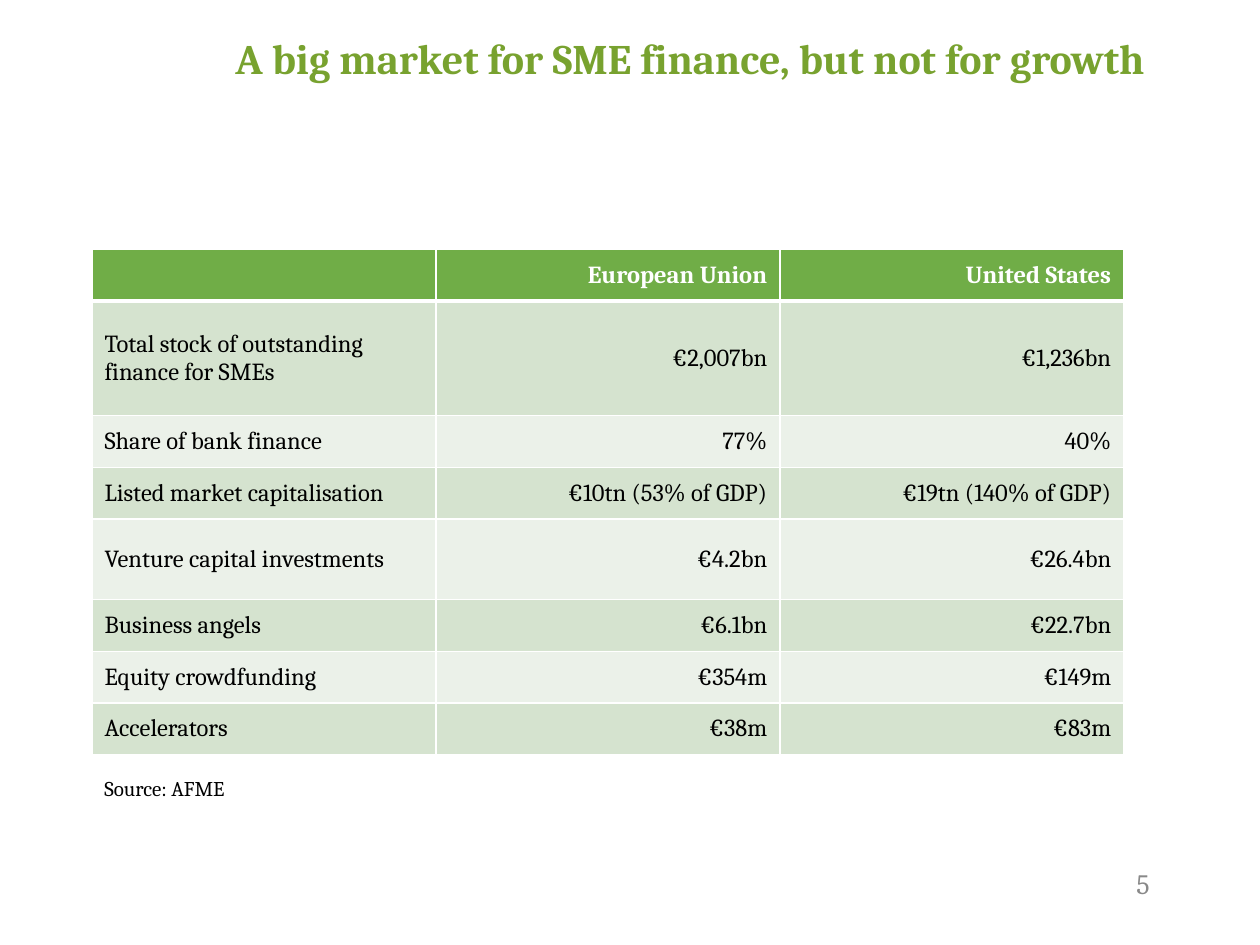
"""Build a slide comparing SME finance in the European Union and the United States."""
import pptx
import pptx.util
import pptx.dml.color
import pptx.enum.text
import pptx.oxml
import pptx.oxml.ns
from pptx.util import Inches
from pptx.dml.color import RGBColor

FONT = "Cambria"
WHITE = RGBColor(0xFF, 0xFF, 0xFF)
BLACK = RGBColor(0x00, 0x00, 0x00)
GREY = RGBColor(0x89, 0x89, 0x89)
TITLE_GREEN = RGBColor(0x78, 0xA2, 0x2F)
HEADER_GREEN = RGBColor(0x70, 0xAD, 0x47)
BANDS = (RGBColor(0xEB, 0xF1, 0xE9), RGBColor(0xD5, 0xE3, 0xCF))

TEXTS = [
    ("5", (8.92, 6.83, 0.48, 0.37), 16, GREY, False, False),
    ("A big market for SME finance, but not for growth",
     (1.77, 0.21, 8.23, 0.91), 24, TITLE_GREEN, True, True),
    ("Source: AFME", (0.73, 6.11, 3.94, 0.47), 12, BLACK, False, True),
]
ROWS = [
    ("", "European Union", "United States"),
    ("Total stock of outstanding finance for SMEs", "€2,007bn", "€1,236bn"),
    ("Share of bank finance", "77%", "40%"),
    ("Listed market capitalisation", "€10tn (53% of GDP)", "€19tn (140% of GDP)"),
    ("Venture capital investments", "€4.2bn", "€26.4bn"),
    ("Business angels", "€6.1bn", "€22.7bn"),
    ("Equity crowdfunding", "€354m", "€149m"),
    ("Accelerators", "€38m", "€83m"),
]
ROW_HEIGHT = 0.41
TALL_ROWS = {1: 0.91, 4: 0.64}
COLUMN_WIDTH = 2.73
TABLE_LEFT, TABLE_TOP = 0.73, 1.98


def add_run(p, text, size, color, bold):
    r = p.add_run()
    r.text = text
    r.font.name = FONT
    r.font.size = pptx.util.Pt(size)
    r.font.bold = bold
    r.font.color.rgb = color


def add_text(s, text, box, size, color, bold, wrap):
    tf = s.shapes.add_textbox(*map(Inches, box)).text_frame
    tf.word_wrap = wrap
    add_run(tf.paragraphs[0], text, size, color, bold)


def set_borders(cell, row):
    widths = {"L": 1, "R": 1, "T": 3 if row == 1 else 1, "B": 3 if row == 0 else 1}
    tc_pr = cell._tc.get_or_add_tcPr()
    for side, width in widths.items():
        tc_pr.append(pptx.oxml.parse_xml(
            f'<a:ln{side} {pptx.oxml.ns.nsdecls("a")} w="{pptx.util.Pt(width)}">'
            f'<a:solidFill><a:srgbClr val="{WHITE}"/></a:solidFill></a:ln{side}>'))


def fill_cell(cell, text, row, column):
    header = row == 0
    set_borders(cell, row)
    cell.fill.solid()
    cell.fill.fore_color.rgb = HEADER_GREEN if header else BANDS[row % 2]
    cell.vertical_anchor = pptx.enum.text.MSO_ANCHOR.MIDDLE
    p = cell.text_frame.paragraphs[0]
    if column:
        p.alignment = pptx.enum.text.PP_ALIGN.RIGHT
    if text:
        add_run(p, text, 14, WHITE if header else BLACK, header)


def add_finance_table(s):
    heights = [TALL_ROWS.get(i, ROW_HEIGHT) for i in range(len(ROWS))]
    columns = len(ROWS[0])
    table = s.shapes.add_table(
        len(ROWS), columns, Inches(TABLE_LEFT), Inches(TABLE_TOP),
        Inches(COLUMN_WIDTH * columns), Inches(sum(heights))).table
    for column in table.columns:
        column.width = Inches(COLUMN_WIDTH)
    for i, (values, height) in enumerate(zip(ROWS, heights)):
        table.rows[i].height = Inches(height)
        for j, text in enumerate(values):
            fill_cell(table.cell(i, j), text, i, j)


def main():
    prs = pptx.Presentation()
    prs.slide_width, prs.slide_height = Inches(10), Inches(7.5)
    s = prs.slides.add_slide(prs.slide_layouts[6])
    add_finance_table(s)
    for item in TEXTS:
        add_text(s, *item)
    prs.save("out.pptx")


if __name__ == "__main__":
    main()
